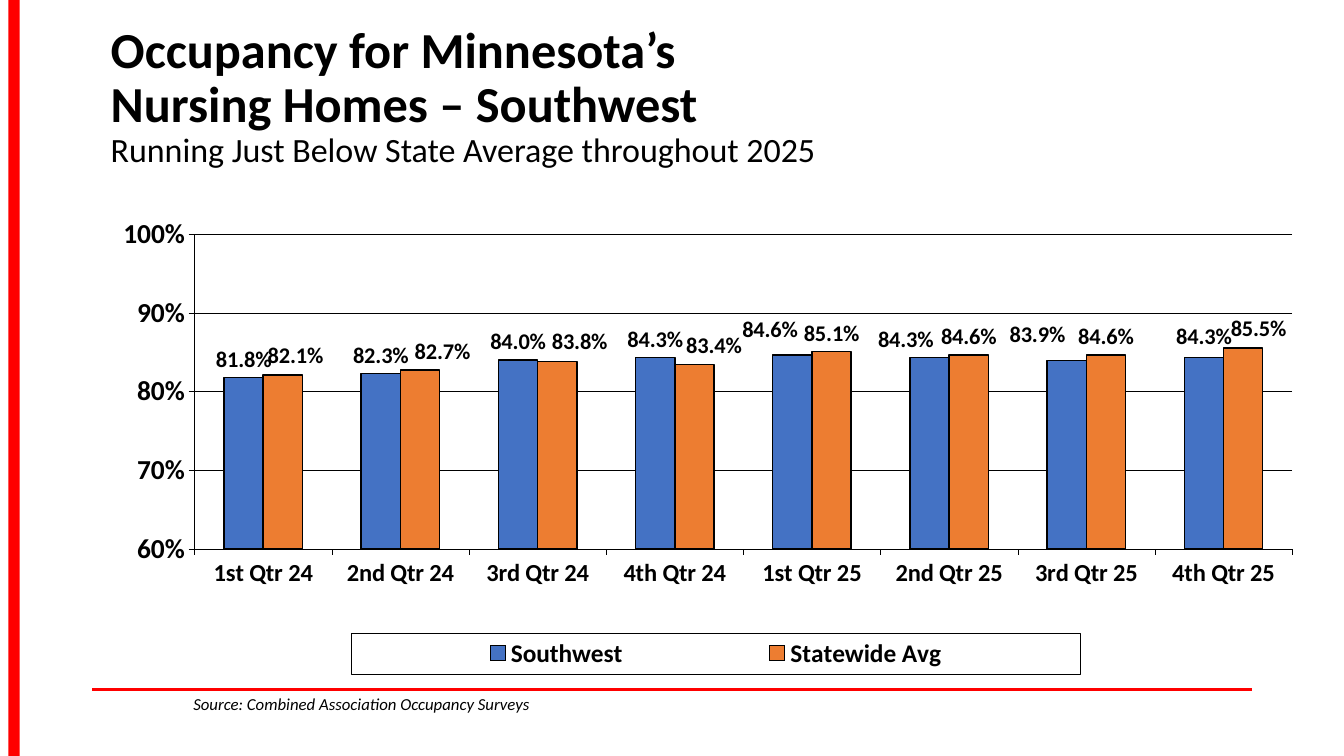
import pptx
import pptx.util
import pptx.chart.data
import pptx.dml.color
import pptx.enum.chart
import pptx.enum.shapes
import pptx.enum.text
import pptx.oxml
import pptx.oxml.ns

Pt = pptx.util.Pt
qn = pptx.oxml.ns.qn
enums = pptx.enum.chart
color = pptx.dml.color.RGBColor.from_string
theme = {
    "font": "Calibri", "ink": color("000000"), "red": color("FF0000"),
    "bars": [color("4472C4"), color("ED7D31")],
    "title": 36, "sub": 24.3, "value": 19.6, "cat": 17.5,
    "key": 18.1, "label": 16, "note": 12,
}


def style(font, size, bold=False, italic=False):
    font.name = theme["font"]
    font.size = Pt(theme[size])
    font.bold = bold
    font.italic = italic
    font.color.rgb = theme["ink"]


def place(node, index, spots):
    old = node.find(qn("c:layout"))
    if old is not None:
        node.remove(old)
    tags = "".join(f'<c:{tag} val="{val}"/>' for tag, val in spots.items())
    space = pptx.oxml.ns.nsdecls("c")
    node.insert(index, pptx.oxml.parse_xml(
        f"<c:layout {space}><c:manualLayout>{tags}</c:manualLayout></c:layout>"))


deck = pptx.Presentation()
deck.slide_width, deck.slide_height = Pt(960), Pt(540)
slide = deck.slides.add_slide(deck.slide_layouts[6])
shapes = slide.shapes

rule = shapes.add_connector(
    pptx.enum.shapes.MSO_CONNECTOR.STRAIGHT, Pt(66), Pt(492.5), Pt(894), Pt(492.5))
rule.line.color.rgb = theme["red"]
rule.line.width = Pt(2)
rule._element.spPr.append(pptx.oxml.parse_xml(
    f'<a:effectLst {pptx.oxml.ns.nsdecls("a")}/>'))

band = shapes.add_shape(
    pptx.enum.shapes.MSO_SHAPE.RECTANGLE, Pt(6), 0, Pt(8), Pt(540))
band.shadow.inherit = False
band.fill.solid()
band.fill.fore_color.rgb = theme["red"]
band.line.fill.background()

title = shapes.add_textbox(Pt(72), Pt(17.3), Pt(828), Pt(104.4)).text_frame
title.word_wrap = True
title.vertical_anchor = pptx.enum.text.MSO_ANCHOR.MIDDLE
head = title.paragraphs[0]
head.text = ("Occupancy for Minnesota’s\vNursing Homes – Southwest\v"
             "Running Just Below State Average throughout 2025")
head.line_spacing = 0.9
for run, size in zip(head.runs, ["title", "title", "sub"]):
    style(run.font, size, bold=size == "title")

data = pptx.chart.data.CategoryChartData(number_format="0.0%")
data.categories = [f"{part} Qtr {year}" for year in (24, 25)
                   for part in ("1st", "2nd", "3rd", "4th")]
data.add_series("Southwest", [0.818, 0.823, 0.84, 0.843, 0.846, 0.843, 0.839, 0.843])
data.add_series("Statewide Avg", [0.821, 0.827, 0.838, 0.834, 0.851, 0.846, 0.846, 0.855])
chart = shapes.add_chart(
    enums.XL_CHART_TYPE.COLUMN_CLUSTERED,
    Pt(20.9), Pt(133.9), Pt(902.2), Pt(349.9), data).chart
chart.has_title = False
style(chart.font, "value", bold=True)

plot = chart.plots[0]
plot.gap_width = 150
plot.overlap = 0
plot.vary_by_categories = False
place(chart._chartSpace.chart.plotArea, 0, {
    "layoutTarget": "inner", "xMode": "edge", "yMode": "edge",
    "x": 0.131, "y": 0.095, "w": 0.869, "h": 0.643})

scale = chart.value_axis
scale.minimum_scale, scale.maximum_scale, scale.major_unit = 0.6, 1, 0.1
scale.has_major_gridlines = True
scale.tick_labels.number_format = "0%"
scale.tick_labels.number_format_is_linked = False
for axis, size in ((scale, "value"), (chart.category_axis, "cat")):
    axis.major_tick_mark = enums.XL_TICK_MARK.OUTSIDE
    axis.minor_tick_mark = enums.XL_TICK_MARK.NONE
    style(axis.tick_labels.font, size, bold=True)
for line in (scale.format.line, chart.category_axis.format.line,
             scale.major_gridlines.format.line):
    line.color.rgb = theme["ink"]
    line.width = Pt(0.27)

shifts = [
    {4: (-16, -5), 5: (-17, 0), 6: (-21, -6), 7: (0, -2)},
    {0: (9, -1), 1: (16, 0), 2: (16, -1), 3: (14, -1), 7: (11, -1)},
]
above = enums.XL_LABEL_POSITION.OUTSIDE_END
for bars, fill, moves in zip(plot.series, theme["bars"], shifts):
    bars.format.fill.solid()
    bars.format.fill.fore_color.rgb = fill
    bars.format.line.color.rgb = theme["ink"]
    bars.format.line.width = Pt(1.09)
    labels = bars.data_labels
    labels.show_value = True
    labels.number_format = "0.0%"
    labels.number_format_is_linked = False
    labels.position = above
    style(labels.font, "label", bold=True)
    for index, (right, down) in moves.items():
        label = bars.points[index].data_label
        style(label.font, "label", bold=True)
        label.position = above
    for node, (right, down) in zip(labels._element.findall(qn("c:dLbl")), moves.values()):
        place(node, 1, {"x": right / 902.2, "y": down / 349.9})

chart.has_legend = True
key = chart.legend
key.position = enums.XL_LEGEND_POSITION.BOTTOM
key.include_in_layout = False
style(key.font, "key", bold=True)
place(key._element, 1, {
    "xMode": "edge", "yMode": "edge", "x": 0.255, "y": 0.909, "w": 0.577, "h": 0.084})
key._element.find(qn("c:overlay")).addnext(pptx.oxml.parse_xml(
    f'<c:spPr {pptx.oxml.ns.nsdecls("c", "a")}><a:ln w="3429"><a:solidFill>'
    f'<a:srgbClr val="{theme["ink"]}"/></a:solidFill></a:ln></c:spPr>'))

note = shapes.add_textbox(Pt(131), Pt(491.8), Pt(379.4), Pt(36)).text_frame
note.word_wrap = True
note.text = "Source: Combined Association Occupancy Surveys"
style(note.paragraphs[0].runs[0].font, "note", italic=True)

deck.save("out.pptx")
